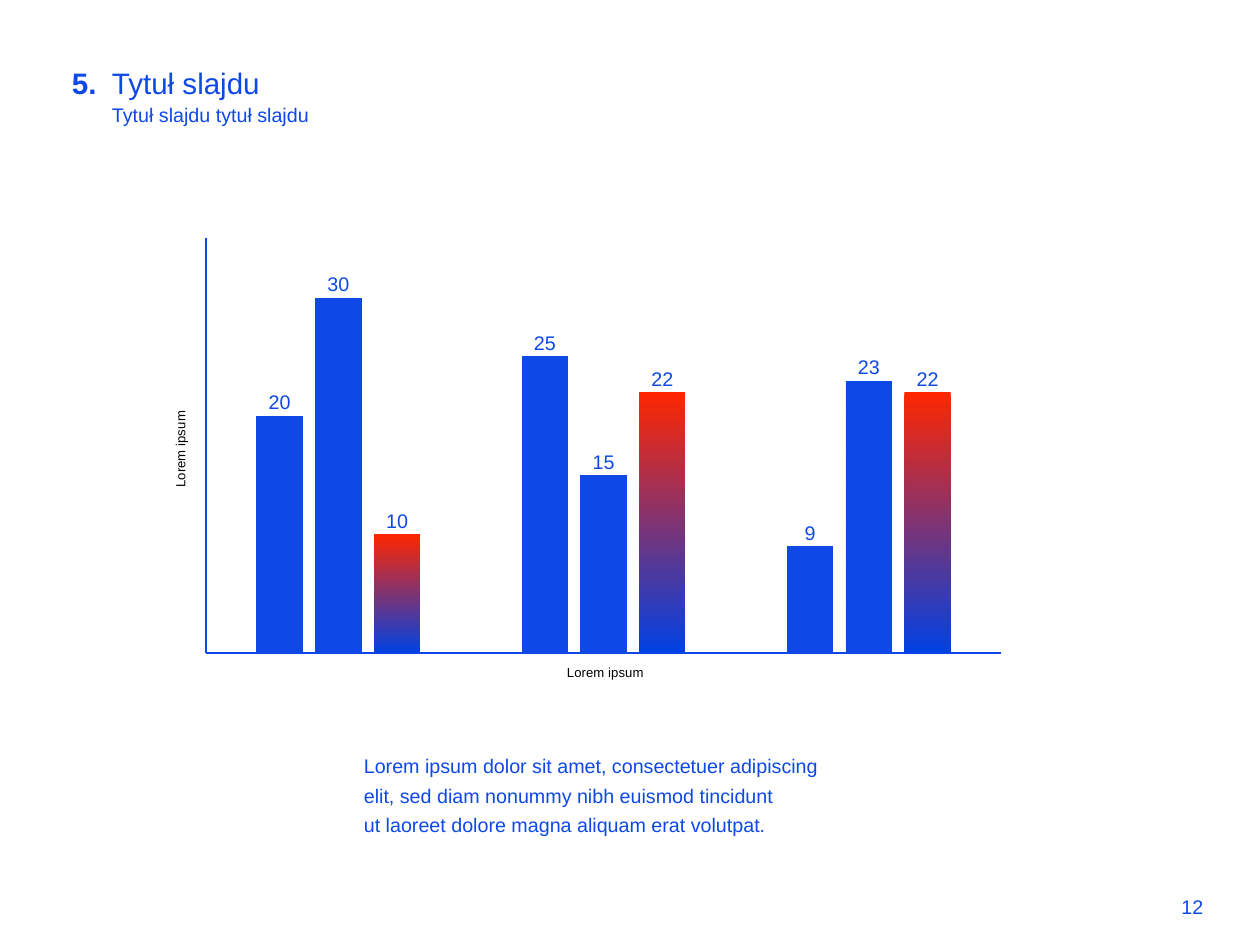
"""Build a slide with a clustered column chart, headings and a caption."""
from dataclasses import dataclass
from typing import Any

from lxml import etree
from pptx import Presentation
from pptx.chart.data import CategoryChartData
from pptx.dml.color import RGBColor
from pptx.enum.chart import XL_CHART_TYPE, XL_LABEL_POSITION, XL_TICK_LABEL_POSITION, XL_TICK_MARK
from pptx.enum.dml import MSO_PATTERN
from pptx.enum.text import MSO_ANCHOR, PP_ALIGN
from pptx.oxml.ns import qn
from pptx.util import Inches, Pt

COLUMNS = XL_CHART_TYPE.COLUMN_CLUSTERED
OUTSIDE_END = XL_LABEL_POSITION.OUTSIDE_END
NO_LABELS = XL_TICK_LABEL_POSITION.NONE
NO_TICKS = XL_TICK_MARK.NONE
DARK_HORIZONTAL = MSO_PATTERN.DARK_HORIZONTAL
LEFT, RIGHT = PP_ALIGN.LEFT, PP_ALIGN.RIGHT
TOP, MIDDLE = MSO_ANCHOR.TOP, MSO_ANCHOR.MIDDLE


@dataclass(frozen=True)
class Theme:
    font: str = "Arial"
    blue: RGBColor = RGBColor(0x0E, 0x49, 0xE8)
    deep_blue: RGBColor = RGBColor(0x00, 0x41, 0xE4)
    red: RGBColor = RGBColor(0xFF, 0x26, 0x00)
    white: RGBColor = RGBColor(0xFF, 0xFF, 0xFF)
    black: RGBColor = RGBColor(0x00, 0x00, 0x00)
    heading: int = 45
    body: int = 30
    axis_title: int = 20
    chart: int = 10
    axis_line: float = 2.25


THEME = Theme()


@dataclass(frozen=True)
class Label:
    text: str
    left: float
    top: float
    width: float
    height: float
    size: int = THEME.body
    line_spacing: int | None = None
    bold: bool = False
    align: PP_ALIGN = LEFT
    anchor: MSO_ANCHOR = TOP


LABELS = (
    Label("Tytuł slajdu", 2.27, 1.11, 19.6, 0.98, THEME.heading, 70),
    Label("5.", 0.53, 1.11, 1.61, 0.98, THEME.heading, 70, True, RIGHT),
    Label("Tytuł slajdu tytuł slajdu", 2.27, 2.01, 19.6, 0.73, line_spacing=45),
    Label(
        "Lorem ipsum dolor sit amet, consectetuer adipiscing elit, sed diam nonummy "
        "nibh euismod tincidunt\nut laoreet dolore magna aliquam erat volutpat.",
        7.6, 15.78, 10.28, 1.93, line_spacing=45,
    ),
    Label("12", 23.79, 18.88, 1.77, 0.61, align=RIGHT, anchor=MIDDLE),
)
SERIES = {
    "Series 1": (20, 25, 9),
    "Series 2": (30, 15, 23),
    "Series 3": (10, 22, 22),
}


def style_font(font: Any, size: float, color: RGBColor, bold: bool = False) -> None:
    font.name = THEME.font
    font.size = Pt(size)
    font.bold = bold
    font.color.rgb = color


def add_label(slide: Any, label: Label) -> None:
    box = slide.shapes.add_textbox(
        Inches(label.left), Inches(label.top), Inches(label.width), Inches(label.height)
    )
    frame = box.text_frame
    frame.word_wrap = True
    frame.vertical_anchor = label.anchor
    paragraph = frame.paragraphs[0]
    paragraph.text = label.text
    paragraph.alignment = label.align
    if label.line_spacing:
        paragraph.line_spacing = Pt(label.line_spacing)
    for run in paragraph.runs:
        style_font(run.font, label.size, THEME.blue, label.bold)


def set_layout(parent: Any, index: int, **values: str | float) -> None:
    for old_layout in parent.findall(qn("c:layout")):
        parent.remove(old_layout)
    layout = etree.Element(qn("c:layout"))
    manual = etree.SubElement(layout, qn("c:manualLayout"))
    for name, value in values.items():
        etree.SubElement(manual, qn(f"c:{name}"), val=str(value))
    parent.insert(index, layout)


def style_axis(axis: Any, title: str, x: float, y: float) -> None:
    axis.has_major_gridlines = False
    axis.major_tick_mark = axis.minor_tick_mark = NO_TICKS
    axis.tick_label_position = NO_LABELS
    axis.format.line.color.rgb = THEME.blue
    axis.format.line.width = Pt(THEME.axis_line)
    paragraph = axis.axis_title.text_frame.paragraphs[0]
    paragraph.text = title
    style_font(paragraph.runs[0].font, THEME.axis_title, THEME.black)
    set_layout(axis.axis_title._element, 1, xMode="edge", yMode="edge", x=x, y=y)


def fill_series(series: Any) -> None:
    solid, patterned, gradient = (item.format.fill for item in series)
    solid.solid()
    solid.fore_color.rgb = THEME.blue
    patterned.patterned()
    patterned.pattern = DARK_HORIZONTAL
    patterned.fore_color.rgb = THEME.blue
    patterned.back_color.rgb = THEME.white
    gradient.gradient()
    gradient.gradient_angle = 270
    for stop, color in zip(gradient.gradient_stops, (THEME.red, THEME.deep_blue)):
        stop.color.rgb = color


def add_column_chart(slide: Any) -> None:
    data = CategoryChartData()
    data.categories = ["1", "2", "3"]
    for name, values in SERIES.items():
        data.add_series(name, values)
    chart = slide.shapes.add_chart(
        COLUMNS, Inches(3.41), Inches(4.84), Inches(18.16), Inches(9.76), data
    ).chart
    chart.has_legend = False
    chart.has_title = False
    style_font(chart.font, THEME.chart, THEME.black)

    plot = chart.plots[0]
    plot.gap_width = 219
    plot.overlap = -27
    plot.vary_by_categories = False
    fill_series(plot.series)
    for series in plot.series:
        series.invert_if_negative = False
        labels = series.data_labels
        labels.show_value = True
        labels.position = OUTSIDE_END
        style_font(labels.font, THEME.body, THEME.blue)

    style_axis(chart.category_axis, "Lorem ipsum", 0.47, 0.94)
    style_axis(chart.value_axis, "Lorem ipsum", 0.01, 0.39)
    chart.value_axis.minimum_scale = 0
    chart.value_axis.maximum_scale = 35
    body = chart.value_axis.axis_title.text_frame._txBody.find(qn("a:bodyPr"))
    body.set("rot", "-5400000")
    body.set("vert", "horz")
    plot_area = chart._chartSpace.chart.plotArea
    set_layout(
        plot_area, 0, layoutTarget="inner", xMode="edge", yMode="edge",
        x=0.052, y=0.02, w=0.927, h=0.9,
    )


def main() -> None:
    presentation = Presentation()
    presentation.slide_width = Inches(26.66)
    presentation.slide_height = Inches(20)
    slide = presentation.slides.add_slide(presentation.slide_layouts[6])
    for label in LABELS:
        add_label(slide, label)
    add_column_chart(slide)
    presentation.save("out.pptx")


if __name__ == "__main__":
    main()
